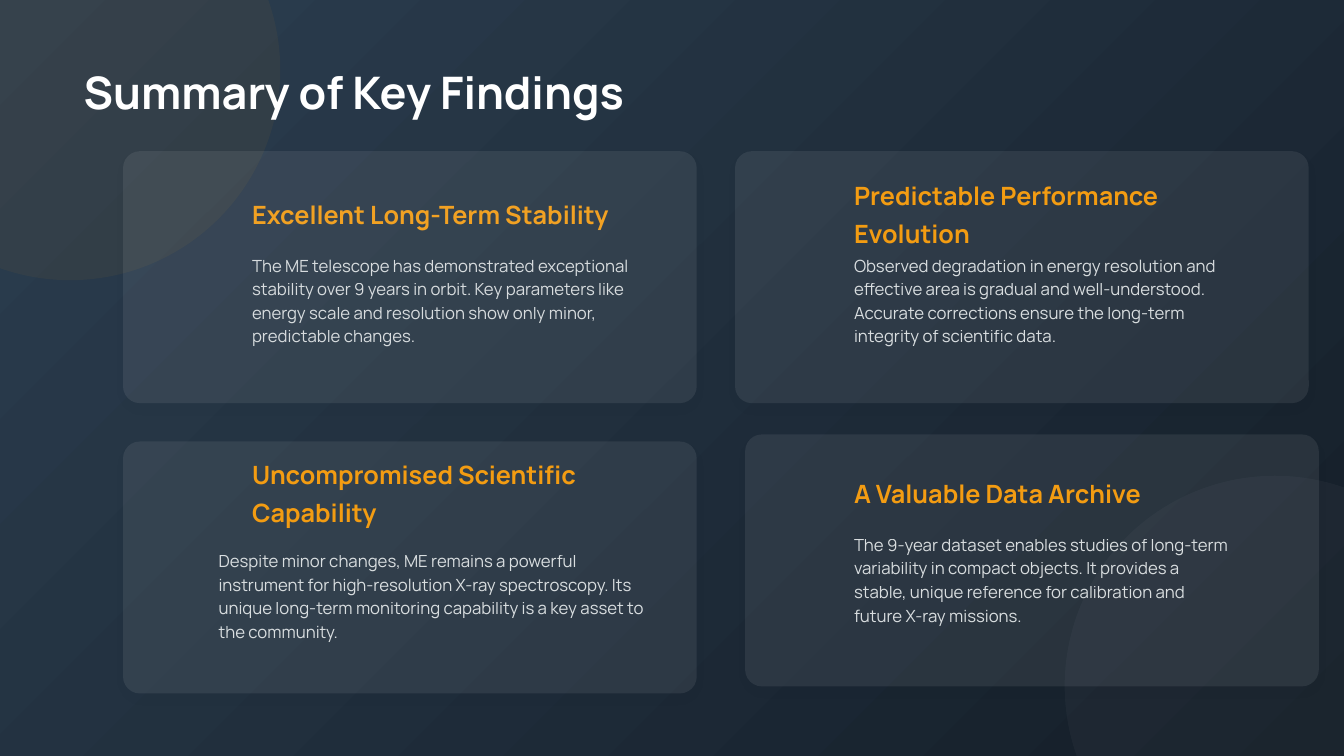
import dataclasses

import pptx
import pptx.dml.color
import pptx.enum.shapes
import pptx.enum.text
import pptx.oxml
import pptx.oxml.ns
import pptx.util

Inches = pptx.util.Inches
Pt = pptx.util.Pt
Shape = pptx.enum.shapes.MSO_SHAPE
Anchor = pptx.enum.text.MSO_ANCHOR
AutoSize = pptx.enum.text.MSO_AUTO_SIZE


@dataclasses.dataclass(frozen=True)
class Theme:
    font: str = "Manrope"
    white: str = "FFFFFF"
    accent: str = "F39C12"
    body: str = "ECF0F1"
    shadow: str = "000000"
    bg_start: str = "2C3E50"
    bg_end: str = "141E28"
    title_size: int = 32
    heading_size: int = 18
    body_size: int = 12


def rgb(color):
    return pptx.dml.color.RGBColor.from_string(color)


def set_opacity(fill_parent, percent):
    clr = next(fill_parent.iter(pptx.oxml.ns.qn("a:srgbClr")))
    alpha = pptx.oxml.parse_xml(
        f'<a:alpha {pptx.oxml.ns.nsdecls("a")} val="{percent * 1000}"/>')
    clr.append(alpha)


class SlideBuilder:
    def __init__(self, prs, theme):
        self.theme = theme
        self.s = prs.slides.add_slide(prs.slide_layouts[5])

    def background(self):
        fill = self.s.background.fill
        fill.gradient()
        fill.gradient_angle = 315
        stops = fill.gradient_stops
        for stop, color in zip(stops, (self.theme.bg_start, self.theme.bg_end)):
            stop.color.rgb = rgb(color)

    def tinted_shape(self, kind, box, color, opacity):
        sp = self.s.shapes.add_shape(kind, *map(Inches, box))
        sp.shadow.inherit = False
        sp.fill.solid()
        sp.fill.fore_color.rgb = rgb(color)
        set_opacity(sp.element.spPr, opacity)
        sp.line.fill.background()
        return sp

    def circle(self, left, top, color, opacity):
        self.tinted_shape(Shape.OVAL, (left, top, 4.17, 4.17), color, opacity)

    def card(self, left, top):
        sp = self.tinted_shape(Shape.ROUNDED_RECTANGLE, (left, top, 5.69, 2.5),
                               self.theme.white, 8)
        sp.adjustments[0] = 0.067
        effects = sp.element.spPr.find(pptx.oxml.ns.qn("a:effectLst"))
        effects.append(pptx.oxml.parse_xml(
            f'<a:outerShdw {pptx.oxml.ns.nsdecls("a")} blurRad="{Pt(12)}" dist="{Pt(4)}"'
            ' dir="5400000" algn="bl" rotWithShape="0">'
            f'<a:srgbClr val="{self.theme.shadow}"><a:alpha val="15000"/></a:srgbClr>'
            '</a:outerShdw>'))

    def set_text(self, sp, text, size, color, spacing, bold=False, anchor=Anchor.TOP,
                 insets=(0, 0)):
        tf = sp.text_frame
        tf.word_wrap = True
        tf.auto_size = AutoSize.NONE
        tf.vertical_anchor = anchor
        tf.margin_left = tf.margin_right = Inches(insets[0])
        tf.margin_top = tf.margin_bottom = Inches(insets[1])
        p = tf.paragraphs[0]
        p.alignment = pptx.enum.text.PP_ALIGN.LEFT
        p.line_spacing = spacing
        r = p.add_run()
        r.text = text
        r.font.name = self.theme.font
        r.font.size = Pt(size)
        r.font.bold = bold
        r.font.color.rgb = rgb(color)
        return r

    def title(self, text):
        """Fill the title placeholder and bring it in front of the circles."""
        sp = self.s.shapes.title
        sp.left, sp.top, sp.width, sp.height = map(Inches, (0.83, 0.56, 11.67, 0.56))
        self.set_text(sp, text, self.theme.title_size, self.theme.white, 1.25,
                      bold=True, anchor=Anchor.MIDDLE)
        sp.element.getparent().append(sp.element)

    def heading(self, left, top, text):
        sp = self.s.shapes.add_textbox(*map(Inches, (left, top, 3.75, 0.42)))
        self.set_text(sp, text, self.theme.heading_size, self.theme.accent, 1.25,
                      bold=True, anchor=Anchor.MIDDLE)

    def body(self, box, text, insets=(0, 0)):
        sp = self.s.shapes.add_textbox(*map(Inches, box))
        r = self.set_text(sp, text, self.theme.body_size, self.theme.body, 1.17,
                          insets=insets)
        set_opacity(r.font._element, 90)
        if any(insets):
            sp.text_frame.auto_size = AutoSize.SHAPE_TO_FIT_TEXT

    def finding(self, left, top, heading, text, body_box=None, insets=(0, 0)):
        self.heading(left, top, heading)
        self.body(body_box or (left, top + 0.62, 3.75, 1.11), text, insets)


CARDS = [(1.22, 4.38), (1.22, 1.5), (7.29, 1.5), (7.39, 4.31)]
LEFT_COL, RIGHT_COL = 2.5, 8.47
TOP_ROW, BOTTOM_ROW = 1.88, 4.65


def main():
    prs = pptx.Presentation()
    prs.slide_width, prs.slide_height = Inches(13.33), Inches(7.5)
    theme = Theme()
    slide = SlideBuilder(prs, theme)
    slide.background()
    slide.circle(-1.39, -1.39, theme.accent, 5)
    slide.circle(10.56, 4.72, theme.white, 3)

    # The first finding lies beneath its translucent card.
    slide.finding(
        LEFT_COL, TOP_ROW, "Excellent Long-Term Stability",
        "The ME telescope has demonstrated exceptional stability over 9 years in orbit. "
        "Key parameters like energy scale and resolution show only minor, "
        "predictable changes.")
    for left, top in CARDS:
        slide.card(left, top)
    slide.finding(
        RIGHT_COL, TOP_ROW, "Predictable Performance Evolution",
        "Observed degradation in energy resolution and effective area is gradual and "
        "well-understood. Accurate corrections ensure the long-term integrity of "
        "scientific data.")
    slide.finding(
        RIGHT_COL, BOTTOM_ROW, "A Valuable Data Archive",
        "The 9-year dataset enables studies of long-term variability in compact objects. "
        "It provides a stable, unique reference for calibration and future X-ray missions.")
    slide.finding(
        LEFT_COL, BOTTOM_ROW, "Uncompromised Scientific Capability",
        "Despite minor changes, ME remains a powerful instrument for high-resolution "
        "X-ray spectroscopy. Its unique long-term monitoring capability is a key asset "
        "to the community.",
        body_box=(2.07, 5.38, 4.56, 1.02), insets=(0.1, 0.05))
    slide.title("Summary of Key Findings")
    prs.save("out.pptx")


if __name__ == "__main__":
    main()
